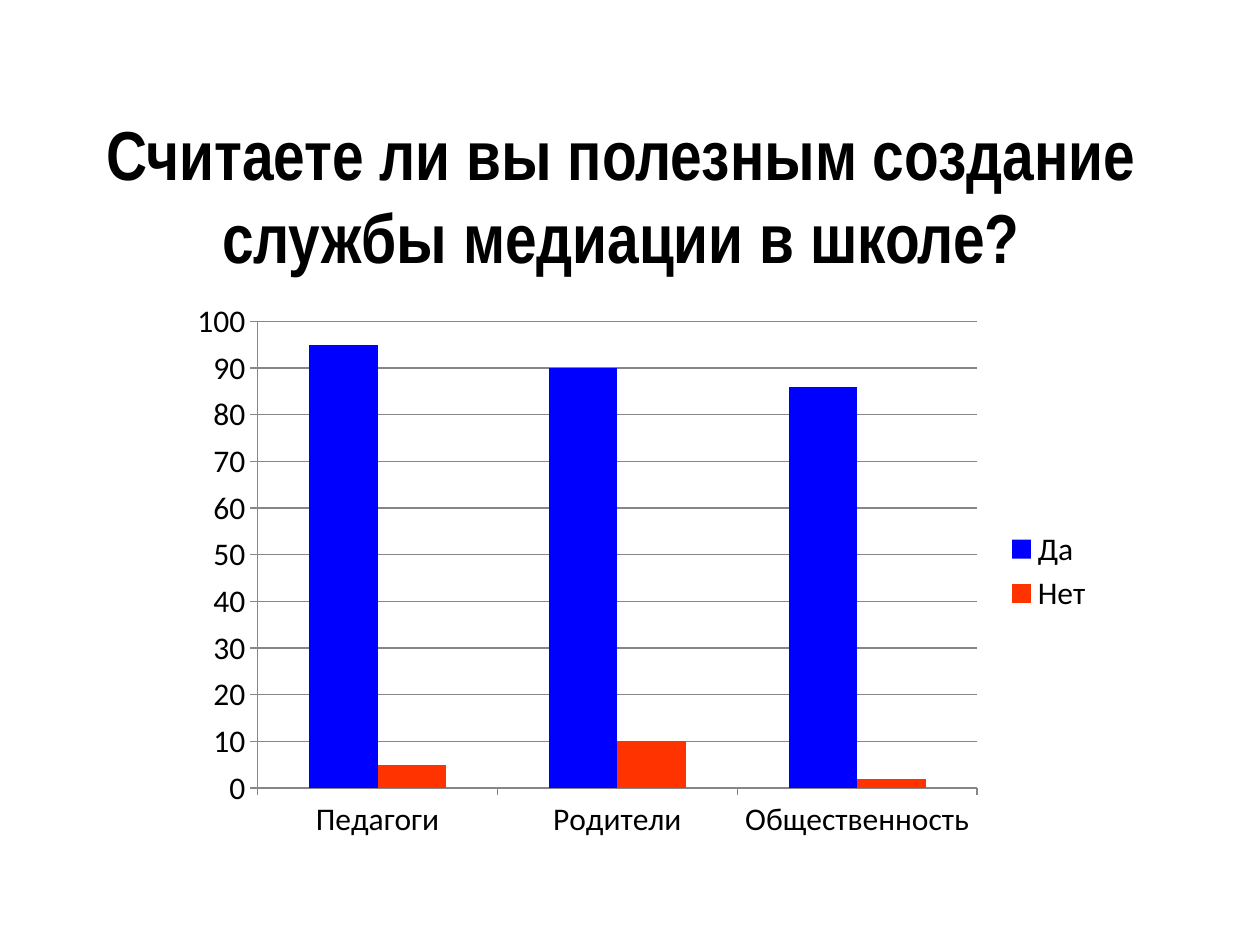
from dataclasses import dataclass

from lxml.etree import SubElement
from pptx import Presentation
from pptx.chart.chart import Chart
from pptx.chart.data import CategoryChartData
from pptx.dml.color import RGBColor
from pptx.enum.chart import XL_CHART_TYPE as ChartType
from pptx.enum.chart import XL_LEGEND_POSITION as LegendPosition
from pptx.enum.chart import XL_TICK_MARK as TickMark
from pptx.enum.text import MSO_ANCHOR as Anchor
from pptx.enum.text import MSO_AUTO_SIZE as AutoSize
from pptx.enum.text import PP_ALIGN as Align
from pptx.oxml.ns import qn
from pptx.slide import Slide
from pptx.util import Inches, Pt

BLACK = "000000"
GRID_GRAY = "868686"
TITLE = "Считаете ли вы полезным создание службы медиации в школе?"
GROUPS = ["Педагоги", "Родители", "Общественность"]


@dataclass
class Answer:
    name: str
    percents: list[int]
    color: str


ANSWERS = [
    Answer("Да", [95, 90, 86], "0000FF"),
    Answer("Нет", [5, 10, 2], "FF3300"),
]


def rgb(value: str) -> RGBColor:
    return RGBColor.from_string(value)


def add_title(page: Slide) -> None:
    title = page.shapes.title
    title.left, title.top = Inches(0.43), Inches(0.92)
    title.width, title.height = Inches(9), Inches(1.25)
    frame = title.text_frame
    frame.word_wrap = True
    frame.auto_size = AutoSize.NONE
    frame.vertical_anchor = Anchor.MIDDLE
    para = frame.paragraphs[0]
    para.alignment = Align.CENTER
    span = para.add_run()
    span.text = TITLE
    span.font.name = "Arial Narrow"
    span.font.size = Pt(39.6)
    span.font.bold = True
    span.font.color.rgb = rgb(BLACK)


def place_plot(chart: Chart, x: float, y: float, w: float, h: float) -> None:
    """Fix the inner plot area, in fractions of the chart frame."""
    plot_area = chart.element.find(".//" + qn("c:plotArea"))
    layout = plot_area.find(qn("c:layout"))
    if layout is None:
        layout = SubElement(plot_area, qn("c:layout"))
        plot_area.insert(0, layout)
    manual = SubElement(layout, qn("c:manualLayout"))
    settings = {"layoutTarget": "inner", "xMode": "edge", "yMode": "edge",
                "x": x, "y": y, "w": w, "h": h}
    for name, value in settings.items():
        SubElement(manual, qn("c:" + name)).set("val", str(value))


def add_answer_chart(page: Slide) -> None:
    data = CategoryChartData()
    data.categories = GROUPS
    for answer in ANSWERS:
        data.add_series(answer.name, answer.percents)
    chart = page.shapes.add_chart(
        ChartType.CLUSTERED if hasattr(ChartType, "CLUSTERED") else ChartType.COLUMN_CLUSTERED,
        Inches(1.46), Inches(2.33), Inches(7.32), Inches(4.41), data).chart
    chart.has_title = False
    chart.font.name = "Calibri"
    chart.font.size = Pt(18)
    chart.font.color.rgb = rgb(BLACK)
    chart.has_legend = True
    chart.legend.position = LegendPosition.RIGHT
    chart.legend.include_in_layout = False

    plot = chart.plots[0]
    plot.gap_width = 150
    plot.overlap = 0
    plot.vary_by_categories = False
    for series, answer in zip(plot.series, ANSWERS):
        series.format.fill.solid()
        series.format.fill.fore_color.rgb = rgb(answer.color)
        series.invert_if_negative = False

    values = chart.value_axis
    values.minimum_scale, values.maximum_scale = 0, 100
    values.major_unit = 10
    values.has_major_gridlines = True
    for axis in (chart.category_axis, values):
        axis.major_tick_mark = TickMark.OUTSIDE
        axis.minor_tick_mark = TickMark.NONE
    for line in (chart.category_axis.format.line, values.format.line,
                 values.major_gridlines.format.line):
        line.color.rgb = rgb(GRID_GRAY)
        line.width = Pt(0.75)
    place_plot(chart, 0.08, 0.05, 0.78, 0.84)


def main() -> None:
    deck = Presentation()
    deck.slide_width, deck.slide_height = Inches(10), Inches(7.5)
    page = deck.slides.add_slide(deck.slide_layouts[5])
    page.background.fill.solid()
    page.background.fill.fore_color.rgb = rgb("FFFFFF")
    add_title(page)
    add_answer_chart(page)
    deck.save("out.pptx")


if __name__ == "__main__":
    main()
